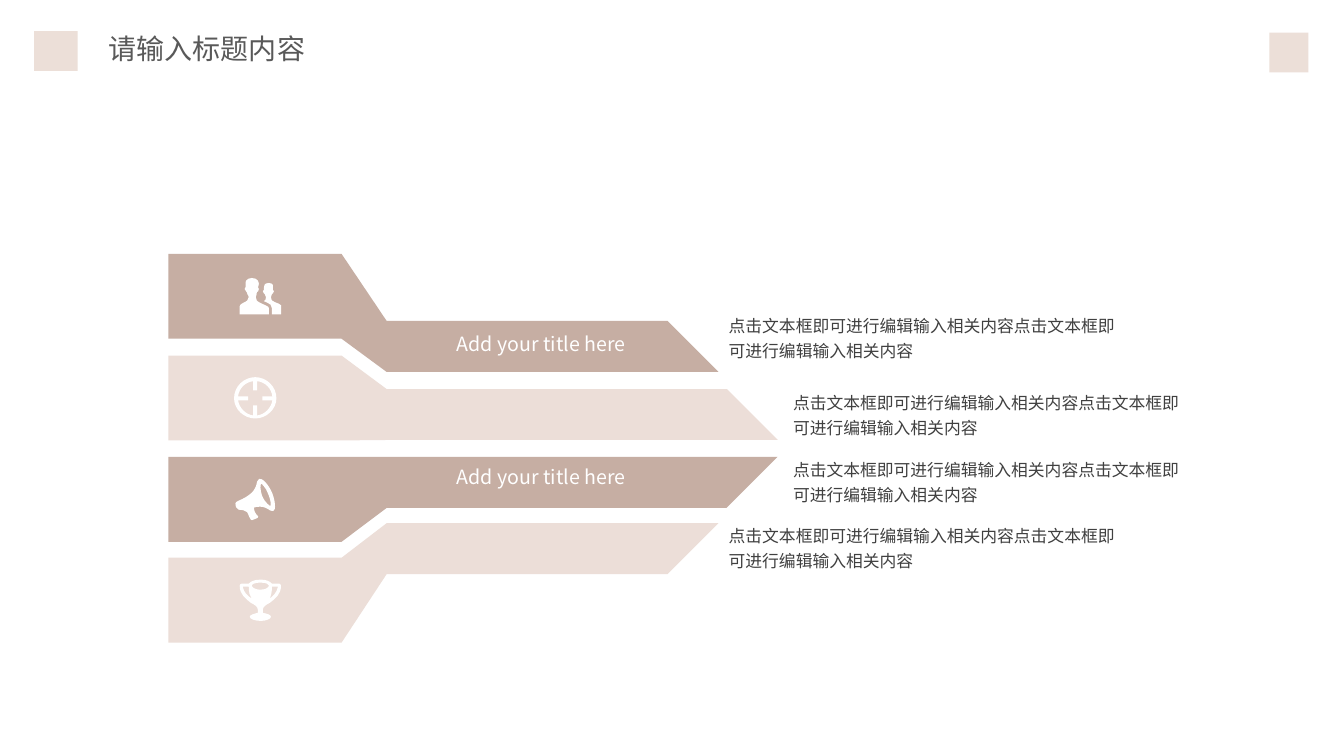
from dataclasses import dataclass

from lxml import etree
from pptx import Presentation
from pptx import util as u
from pptx.dml.color import RGBColor
from pptx.enum import shapes, text
from pptx.oxml import ns

BROWN = RGBColor(0xC6, 0xAE, 0xA3)
BLUSH = RGBColor(0xEC, 0xDE, 0xD8)
SAND = RGBColor(0xEC, 0xDF, 0xD8)
WHITE = RGBColor(0xFF, 0xFF, 0xFF)
DARK = RGBColor(0x40, 0x40, 0x40)
GREY = RGBColor(0x59, 0x59, 0x59)
FONT = "Noto Sans CJK SC"
TITLE = "Add your title here"
BODY = "点击文本框即可进行编辑输入相关内容点击文本框即可进行编辑输入相关内容"

# Band geometry in points
LEFT, BEND, ARM = 120.3, 244, 276.2
BLOCK_H, ARM_H, TAPER = 60.6, 36.4, 36.4
UNIT = 0.72  # points per icon grid step
FINE = 100  # freeform steps per point

# Icon outlines: M starts a contour, L a line, C a run of cubic curves
PEOPLE = (
    "M 21 25 C 17 23 16 22 16 19 16 17 17 18 17 14 18 13 19 14 19 11 19 10 18 9 18 9 "
    "18 9 19 8 19 6 19 4 18 0 12 0 7 0 5 4 6 6 6 8 6 9 6 9 6 9 5 10 5 11 "
    "6 14 7 13 7 14 8 18 9 17 9 19 9 22 7 23 3 25 2 26 0 26 0 28 "
    "L 0 36 29 36 C 29 36 29 31 29 30 29 28 25 27 21 25 "
    "M 41 36 C 41 36 41 28 41 27 40 26 38 25 35 24 32 23 31 22 31 19 31 18 32 18 32 16 "
    "33 15 33 16 34 13 34 12 33 12 33 12 33 12 33 11 33 10 34 8 33 5 29 5 "
    "24 5 24 8 24 10 24 11 24 12 24 12 24 12 23 12 23 13 24 16 24 15 25 16 "
    "25 18 26 18 26 19 26 21 26 22 24 23 31 26 32 27 32 30 L 32 36"
)
TARGET = (
    "M 23 38 L 23 28 19 28 19 38 C 11 37 5 30 4 23 L 14 23 14 19 4 19 "
    "C 5 11 11 5 19 4 L 19 13 23 13 23 4 C 31 5 37 11 38 19 "
    "L 28 19 28 23 38 23 C 37 30 31 37 23 38 "
    "M 21 0 C 10 0 0 9 0 21 0 32 10 41 21 41 32 41 42 32 42 21 42 9 32 0 21 0"
)
HORN = (
    "M 35 27 C 35 27 30 24 27 17 25 11 25 5 26 5 26 4 31 9 33 15 36 22 36 27 35 27 "
    "M 37 14 C 33 5 27 -1 24 0 19 2 27 12 3 22 0 23 0 26 1 28 2 30 5 32 7 31 "
    "7 31 8 31 8 31 10 33 12 32 12 33 13 34 14 38 15 39 15 40 16 41 17 41 "
    "18 41 21 39 22 39 23 39 23 38 23 37 23 36 21 36 21 35 20 34 19 31 19 30 "
    "18 29 19 28 21 28 32 26 34 33 38 32 41 31 40 22 37 14"
)
CUP = (
    "M 3 7 L 9 7 C 9 13 10 16 12 19 8 16 4 13 3 7 "
    "M 21 3 C 27 3 29 5 29 6 29 7 27 10 21 10 14 10 12 7 12 6 12 5 14 3 21 3 "
    "M 30 19 C 31 16 32 13 32 7 L 38 7 C 37 13 33 16 30 19 "
    "M 23 30 C 23 27 26 25 30 23 35 19 41 15 41 6 41 5 40 4 39 4 "
    "L 32 4 C 30 2 27 0 21 0 14 0 11 2 9 4 L 2 4 C 1 4 0 5 0 6 "
    "0 15 6 19 11 23 15 25 18 27 18 30 L 18 33 C 14 34 10 35 10 37 "
    "10 39 15 41 21 41 26 41 31 39 31 37 31 35 28 34 23 33 L 23 30"
)

Point = tuple[float, float]


@dataclass
class Icon:
    left: float
    top: float
    lines: str


@dataclass
class Band:
    top: float
    arm: float
    tip: float
    down: bool  # the tip is at the lower edge
    fill: RGBColor
    note: Point
    icon: Icon


BANDS = [
    Band(181.4, 229.3, 513.2, True, BROWN, (513.4, 218.5), Icon(171.2, 198.6, PEOPLE)),
    Band(254, 277.9, 555.6, True, BLUSH, (559.4, 273.3), Icon(167.2, 269.4, TARGET)),
    Band(326.4, 326.4, 555.4, False, BROWN, (559.4, 321.4), Icon(167.8, 342, HORN)),
    Band(398.4, 373.7, 513.2, False, BLUSH, (513.4, 368.6), Icon(171.2, 414, CUP)),
]
TITLE_TOPS = (233.4, 328.4)


def paint(shape, fill: RGBColor) -> None:
    shape.shadow.inherit = False
    shape.fill.solid()
    shape.fill.fore_color.rgb = fill
    shape.line.fill.background()


def add_form(slide, rings: list[list[Point]], fill: RGBColor):
    rings = [[(x * FINE, y * FINE) for x, y in ring] for ring in rings]
    form = slide.shapes.build_freeform(*rings[0][0], scale=u.Pt(1) / FINE)
    form.add_line_segments(rings[0][1:], close=True)
    for ring in rings[1:]:
        form.move_to(*ring[0])
        form.add_line_segments(ring[1:], close=True)
    shape = form.convert_to_shape()
    paint(shape, fill)
    return shape


def add_text(slide, box: tuple, words: str, size: float, color: RGBColor,
             align=text.PP_ALIGN.LEFT, space: float = 1) -> None:
    frame = slide.shapes.add_textbox(*map(u.Pt, box)).text_frame
    frame.word_wrap = True
    frame.auto_size = text.MSO_AUTO_SIZE.SHAPE_TO_FIT_TEXT
    frame.text = words
    para = frame.paragraphs[0]
    para.alignment, para.line_spacing = align, space
    run = para.runs[0]
    run.font.size = u.Pt(size)
    run.font.color.rgb = color
    run.font.name = FONT
    etree.SubElement(run._r.get_or_add_rPr(), ns.qn("a:ea"), typeface=FONT)


def add_band(slide, band: Band) -> None:
    base, low = band.top + BLOCK_H, band.arm + ARM_H
    high_x, low_x = band.tip - TAPER, band.tip
    if not band.down:
        high_x, low_x = low_x, high_x
    add_form(slide, [[
        (LEFT, band.top), (BEND, band.top), (ARM, band.arm), (high_x, band.arm),
        (low_x, low), (ARM, low), (BEND, base), (LEFT, base),
    ]], band.fill)


def add_icon(slide, icon: Icon) -> None:
    rings, bends, mode = [], [], ""
    marks = iter(icon.lines.split())
    for mark in marks:
        if mark in "MLC":
            mode = mark
            continue
        spot = (icon.left + UNIT * int(mark), icon.top + UNIT * int(next(marks)))
        if mode == "M":
            rings.append([spot])
        else:
            rings[-1].append(spot)
            bends.append(mode == "C")
    shape = add_form(slide, rings, WHITE)

    # Join each three curve points into one cubic segment
    lines = list(shape._element.iter(ns.qn("a:lnTo")))
    curved = [line for line, bend in zip(lines, bends) if bend]
    for first, second, third in zip(*[iter(curved)] * 3):
        first.tag = ns.qn("a:cubicBezTo")
        for line in (second, third):
            first.append(line[0])
            line.getparent().remove(line)


def main() -> None:
    deck = Presentation()
    deck.slide_width, deck.slide_height = u.Pt(960), u.Pt(540)
    slide = deck.slides.add_slide(deck.slide_layouts[6])

    # Bands and icons
    for band in BANDS:
        add_band(slide, band)
        add_icon(slide, band.icon)

    # Titles on the brown bands, notes beside all bands
    for top in TITLE_TOPS:
        add_text(slide, (291.6, top, 190, 24.2), TITLE, 14, WHITE,
                 text.PP_ALIGN.CENTER)
    for band in BANDS:
        add_text(slide, (*band.note, 293, 44), BODY, 12, DARK, space=1.25)

    # Header
    add_text(slide, (70.6, 19.1, 256, 31.5), "请输入标题内容", 20, GREY)
    for box in ((24.3, 22.2, 31.2, 28.4), (906.7, 23.3, 28, 28.4)):
        square = slide.shapes.add_shape(shapes.MSO_SHAPE.RECTANGLE, *map(u.Pt, box))
        paint(square, SAND)

    deck.save("out.pptx")


if __name__ == "__main__":
    main()
